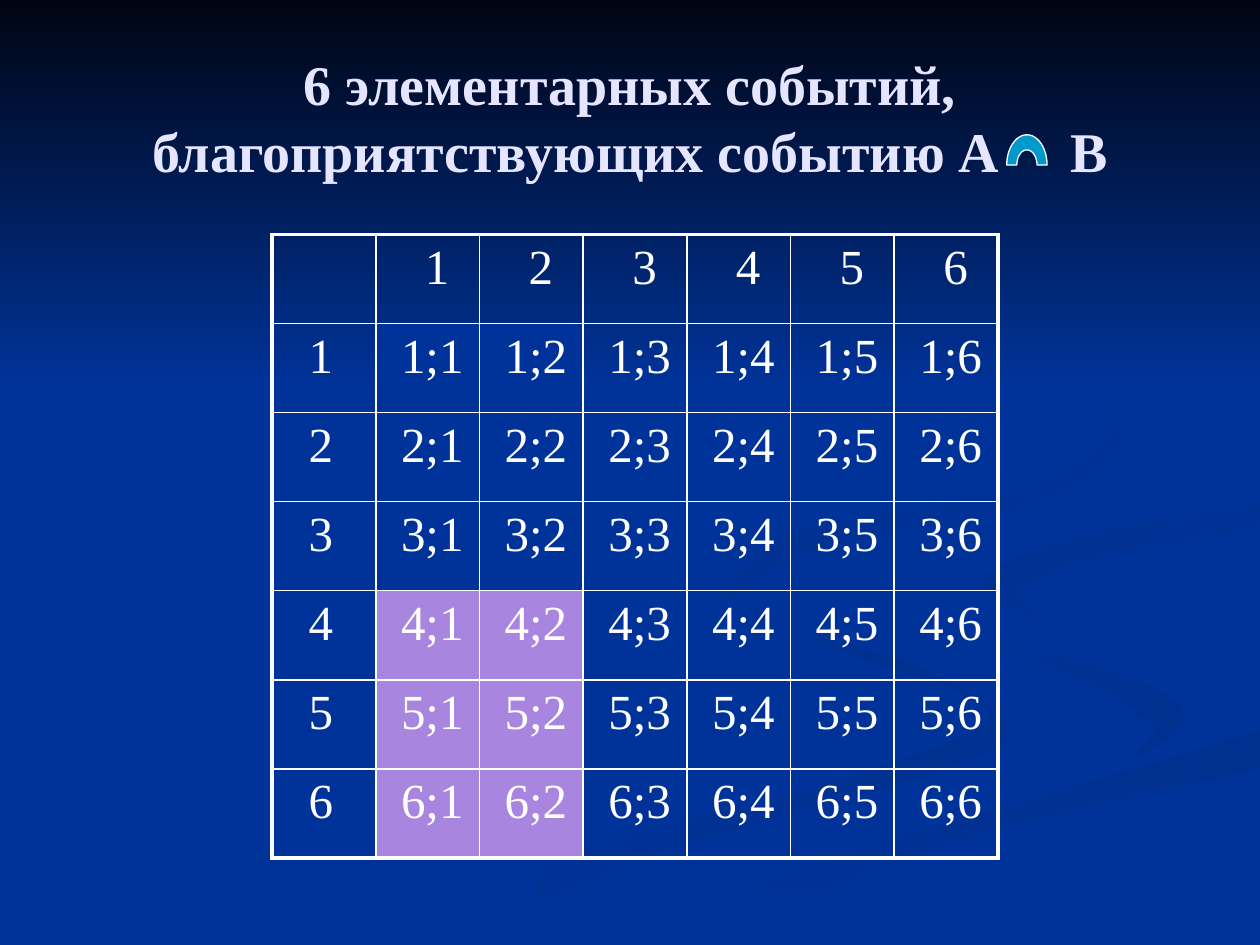
from dataclasses import dataclass
from math import cos, pi, sin

from lxml import etree
from pptx import Presentation
from pptx.dml.color import RGBColor
from pptx.enum import text
from pptx.oxml import ns
from pptx.util import Inches, Pt

BLUE = RGBColor(0x00, 0x33, 0x99)
DEEP_BLUE = RGBColor(0x00, 0x30, 0x90)
NIGHT = RGBColor(0x00, 0x05, 0x14)
LAVENDER = RGBColor(0xE5, 0xE5, 0xFF)
PURPLE = RGBColor(0xA8, 0x86, 0xE0)
TEAL = RGBColor(0x00, 0x99, 0xCC)
WHITE = RGBColor(0xFF, 0xFF, 0xFF)
FONT = "Times New Roman"
SIDES = 6  # faces of each die

Points = list[tuple[float, float]]


@dataclass
class Ribbon:
    """A background ribbon between two curved edges, with its gradient."""
    edge: Points
    return_edge: Points
    start: RGBColor
    end: RGBColor
    angle: int = 0


RIBBONS = [
    # Lower left
    Ribbon([(5.75, 4.6), (6.1, 4.95), (7.3, 5.3), (8, 5.8), (7.2, 6.2), (5.3, 6.75), (3.6, 7.5)],
           [(3, 7.5), (4.6, 6.75), (6.8, 6.15), (7.85, 5.65), (6.5, 5.1), (5.7, 4.7)],
           BLUE, DEEP_BLUE),
    # Inner edge of the middle ribbon
    Ribbon([(7.25, 4.65), (7.6, 5), (8.9, 5.35), (9.4, 5.7), (8.95, 6.05)],
           [(9.2, 5.8), (8.7, 5.45), (7.5, 5)], BLUE, DEEP_BLUE, 45),
    # Lower right
    Ribbon([(5.05, 7.5), (6.3, 6.9), (8, 6.4), (10, 5.8)],
           [(10, 6.1), (7.5, 6.7), (5.7, 7.5)], DEEP_BLUE, BLUE, 90),
    # Upper edge of the middle ribbon
    Ribbon([(10, 4), (8.6, 4.25), (7.8, 4.6), (8.25, 4.95)],
           [(8.05, 4.7), (8.6, 4.45), (10, 4.2)], DEEP_BLUE, BLUE, 45),
    # Curl at the top
    Ribbon([(7.6, 2.35), (8.6, 2.9), (8.9, 3.5), (8.2, 4), (6.5, 4.35), (5.95, 4.7), (6.2, 5)],
           [(5.8, 4.6), (6.4, 4.2), (8.2, 3.85), (8.85, 3.35), (8.4, 2.75)],
           DEEP_BLUE, BLUE, 45),
]


def smooth(knots: Points, steps: int = 6) -> Points:
    """Catmull-Rom curve through the knots."""
    padded = [knots[0], *knots, knots[-1]]
    curve = []
    for a, b, c, d in zip(padded, padded[1:], padded[2:], padded[3:]):
        for step in range(steps):
            t = step / steps
            curve.append(tuple(
                q + t / 2 * (r - p + t * (2 * p - 5 * q + 4 * r - s
                                          + t * (3 * (q - r) + s - p)))
                for p, q, r, s in zip(a, b, c, d)))
    return curve + [knots[-1]]


def draw_outline(page, points: Points):
    corners = [(Inches(x), Inches(y)) for x, y in points]
    builder = page.shapes.build_freeform(*corners[0], scale=1.0)
    builder.add_line_segments(corners[1:], close=True)
    shape = builder.convert_to_shape()
    shape.shadow.inherit = False
    return shape


def draw_band(page, points: Points, start: RGBColor, end: RGBColor, angle: int) -> None:
    shape = draw_outline(page, points)
    shape.line.fill.background()
    shape.fill.gradient()
    shape.fill.gradient_angle = -angle % 360
    for stop, color in zip(shape.fill.gradient_stops, (start, end)):
        stop.color.rgb = color


def draw_background(page) -> None:
    page.background.fill.solid()
    page.background.fill.fore_color.rgb = BLUE
    for ribbon in RIBBONS:
        outline = smooth(ribbon.edge) + smooth(ribbon.return_edge)
        draw_band(page, outline, ribbon.start, ribbon.end, ribbon.angle)
    # Night sky behind the title
    draw_band(page, [(0, 0), (0, 3.08), (10, 3.08), (10, 0)], NIGHT, BLUE, 90)


def draw_arch(page, center_x: float, base: float, width: float, height: float) -> None:
    """The intersection sign: two half ellipses, the inner half as large."""
    angles = [pi * step / 24 for step in range(25)]

    def half_ellipse(size: float) -> Points:
        return [(center_x - size * width / 2 * cos(a), base - size * height * sin(a))
                for a in angles]

    arch = draw_outline(page, half_ellipse(1) + half_ellipse(0.5)[::-1])
    arch.fill.solid()
    arch.fill.fore_color.rgb = TEAL
    arch.line.color.rgb = WHITE
    arch.line.width = Pt(0.75)


def add_span(para, words: str, size: int, color: RGBColor, bold: bool = False):
    span = para.add_run()
    span.text = words
    for name, value in {"name": FONT, "size": Pt(size), "bold": bold}.items():
        setattr(span.font, name, value)
    span.font.color.rgb = color
    return span


def set_border(cell, side: str, points: float) -> None:
    line = etree.SubElement(cell._tc.get_or_add_tcPr(), ns.qn(f"a:ln{side}"),
                            w=str(Pt(points)))
    fill = etree.SubElement(line, ns.qn("a:solidFill"))
    etree.SubElement(fill, ns.qn("a:srgbClr"), val=str(WHITE))


def fill_cell(cell, row: int, column: int) -> None:
    # Wording, and how far it is set in
    if row == 0:
        words, inset = (str(column) if column else ""), 0.39
    elif column == 0:
        words, inset = str(row), 0.29
    else:
        words, inset = f"{row};{column}", 0.2
    margins = {"margin_left": inset, "margin_right": 0.05,
               "margin_top": 0.05, "margin_bottom": 0.05}
    for name, value in margins.items():
        setattr(cell, name, Inches(value))
    if words:
        add_span(cell.text_frame.paragraphs[0], words, 28, WHITE)
    # Thick frame outside, thin rules inside
    outer = {"L": column == 0, "R": column == SIDES, "T": row == 0, "B": row == SIDES}
    for side, is_outer in outer.items():
        set_border(cell, side, 2.25 if is_outer else 1)
    # Favourable outcomes stand out
    if row and column in (1, 2):
        cell.fill.solid()
        cell.fill.fore_color.rgb = PURPLE if row >= 4 else BLUE
    else:
        cell.fill.background()


def draw_outcomes(page) -> None:
    count = SIDES + 1
    table = page.shapes.add_table(count, count, Inches(2.16), Inches(1.86),
                                  Inches(5.76), Inches(4.95)).table
    table.first_row = table.horz_banding = False
    for row in range(count):
        for column in range(count):
            fill_cell(table.cell(row, column), row, column)


def format_title(page) -> None:
    title = page.shapes.title
    page.shapes._spTree.append(title._element)  # in front of the background
    place = {"left": 0.5, "top": 0.3, "width": 9, "height": 1.25}
    for name, value in place.items():
        setattr(title, name, Inches(value))
    title.text_frame.vertical_anchor = text.MSO_ANCHOR.MIDDLE
    para = title.text_frame.paragraphs[0]
    para.alignment = text.PP_ALIGN.CENTER
    add_span(para, "6 элементарных событий, благоприятствующих событию А", 32, LAVENDER, True)
    gap = add_span(para, " ", 32, LAVENDER, True)
    gap.font._element.set("spc", "3200")  # room for the intersection sign
    add_span(para, "В", 32, LAVENDER, True)


def main() -> None:
    deck = Presentation()
    deck.slide_width, deck.slide_height = Inches(10), Inches(7.5)
    page = deck.slides.add_slide(deck.slide_layouts[5])
    draw_background(page)
    format_title(page)
    draw_arch(page, center_x=8.15, base=1.31, width=0.32, height=0.24)
    draw_outcomes(page)
    deck.save("out.pptx")


if __name__ == "__main__":
    main()
